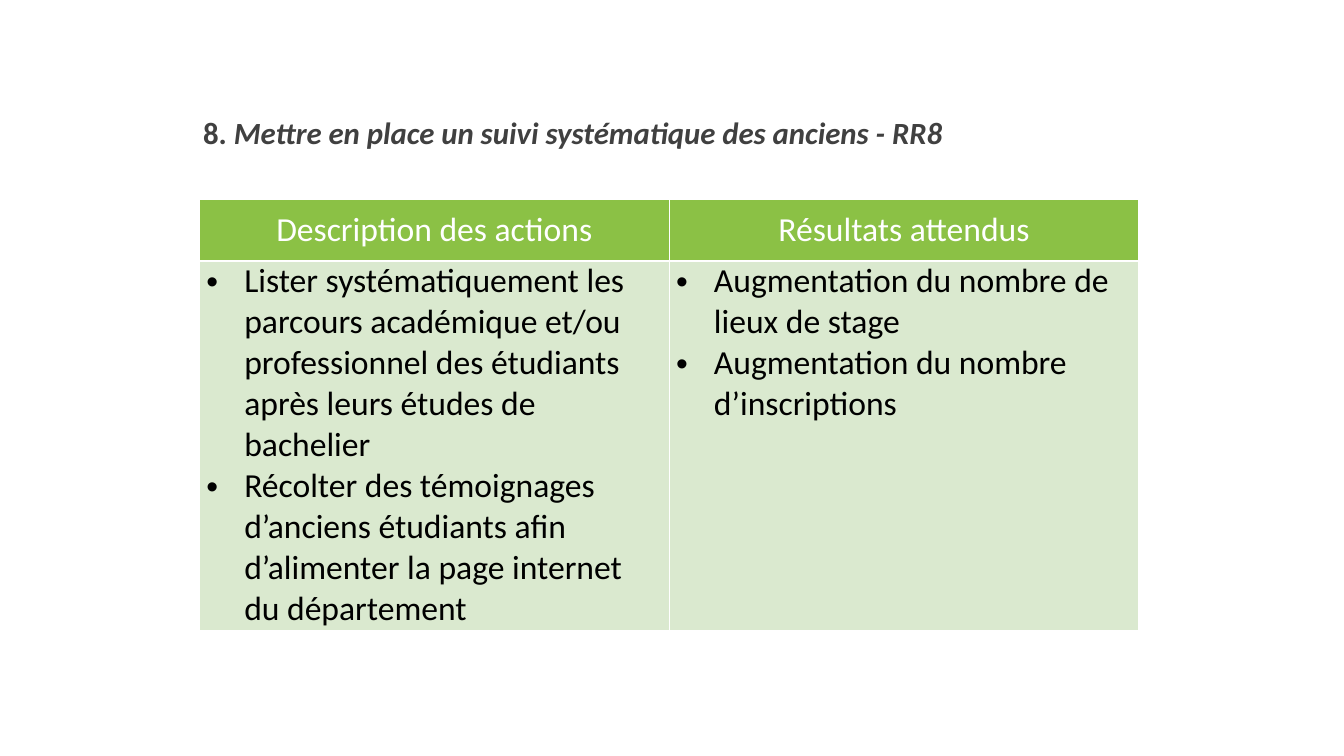
"""Build the slide on following up former students."""
from lxml.etree import SubElement
from pptx import Presentation
from pptx.dml.color import RGBColor
from pptx.enum.text import MSO_ANCHOR, PP_ALIGN
from pptx.oxml.ns import qn
from pptx.util import Pt

WHITE = RGBColor(0xFF, 0xFF, 0xFF)
BLACK = RGBColor(0, 0, 0)
GREY = RGBColor(0x40, 0x40, 0x40)
GREEN = RGBColor(0x8B, 0xC1, 0x45)
PALE_GREEN = RGBColor(0xDA, 0xE9, 0xCF)

COLUMNS = [
    ("Description des actions", [
        "Lister systématiquement les parcours académique et/ou professionnel "
        "des étudiants après leurs études de bachelier",
        "Récolter des témoignages d’anciens étudiants afin d’alimenter "
        "la page internet du département",
    ]),
    ("Résultats attendus", [
        "Augmentation du nombre de lieux de stage",
        "Augmentation du nombre d’inscriptions",
    ]),
]


class SlideBuilder:
    """Hold the text style and the current slide."""

    font = "Calibri"
    title_size = 22
    table_size = 24
    bullet_indent = 27

    def __init__(self, page):
        """Keep the slide to draw on."""
        self.page = page

    def add_span(self, para, text, size, color, bold=False, italic=False):
        """Append one styled run to a paragraph."""
        span = para.add_run()
        span.text = text
        span.font.name = self.font
        span.font.size = Pt(size)
        span.font.color.rgb = color
        span.font.bold = bold
        span.font.italic = italic

    def add_title(self, left, top, width, height, number, wording):
        """Add the numbered title in a text box."""
        frame = self.page.shapes.add_textbox(
            Pt(left), Pt(top), Pt(width), Pt(height)).text_frame
        frame.word_wrap = True
        frame.vertical_anchor = MSO_ANCHOR.MIDDLE
        para = frame.paragraphs[0]
        para.alignment = PP_ALIGN.JUSTIFY
        para.line_spacing = 0.9
        self.add_span(para, number, self.title_size, GREY, bold=True)
        self.add_span(para, wording, self.title_size, GREY, bold=True, italic=True)

    def style_cell(self, cell, fill, side_margin, end_margin):
        """Set the margins, white borders and fill of a cell."""
        cell.margin_left = cell.margin_right = Pt(side_margin)
        cell.margin_top = cell.margin_bottom = Pt(end_margin)
        properties = cell._tc.get_or_add_tcPr()
        for side in ("a:lnL", "a:lnR", "a:lnT", "a:lnB"):
            border = SubElement(properties, qn(side), w=str(Pt(1)))
            paint = SubElement(border, qn("a:solidFill"))
            SubElement(paint, qn("a:srgbClr"), val=str(WHITE))
        cell.fill.solid()
        cell.fill.fore_color.rgb = fill

    def add_bullet(self, para):
        """Give a paragraph a hanging bullet."""
        properties = para._p.get_or_add_pPr()
        properties.set("marL", str(Pt(self.bullet_indent)))
        properties.set("indent", str(-Pt(self.bullet_indent)))
        SubElement(properties, qn("a:buFont"), typeface="Arial")
        SubElement(properties, qn("a:buChar"), char="•")

    def add_table(self, left, top, width, row_heights, columns):
        """Add a table with a heading and a bullet list in each column."""
        table = self.page.shapes.add_table(
            len(row_heights), len(columns), Pt(left), Pt(top),
            Pt(width), Pt(sum(row_heights))).table
        for row, height in zip(table.rows, row_heights):
            row.height = Pt(height)
        for index, (heading, items) in enumerate(columns):
            table.columns[index].width = Pt(width / len(columns))
            head, body = table.cell(0, index), table.cell(1, index)
            self.style_cell(head, GREEN, 7.2, 7.2)
            self.style_cell(body, PALE_GREEN, 5, 0)
            para = head.text_frame.paragraphs[0]
            para.alignment = PP_ALIGN.CENTER
            self.add_span(para, heading, self.table_size, WHITE)
            for position, item in enumerate(items):
                frame = body.text_frame
                para = frame.add_paragraph() if position else frame.paragraphs[0]
                self.add_bullet(para)
                self.add_span(para, item, self.table_size, BLACK)


def main():
    """Build and save the deck."""
    deck = Presentation()
    deck.slide_width, deck.slide_height = Pt(960), Pt(540)
    builder = SlideBuilder(deck.slides.add_slide(deck.slide_layouts[6]))
    builder.add_title(138, 54, 685.5, 84, "8. ",
                      "Mettre en place un suivi systématique des anciens - RR8")
    builder.add_table(142.5, 142.5, 671, (44, 264), COLUMNS)
    deck.save("out.pptx")


if __name__ == "__main__":
    main()
